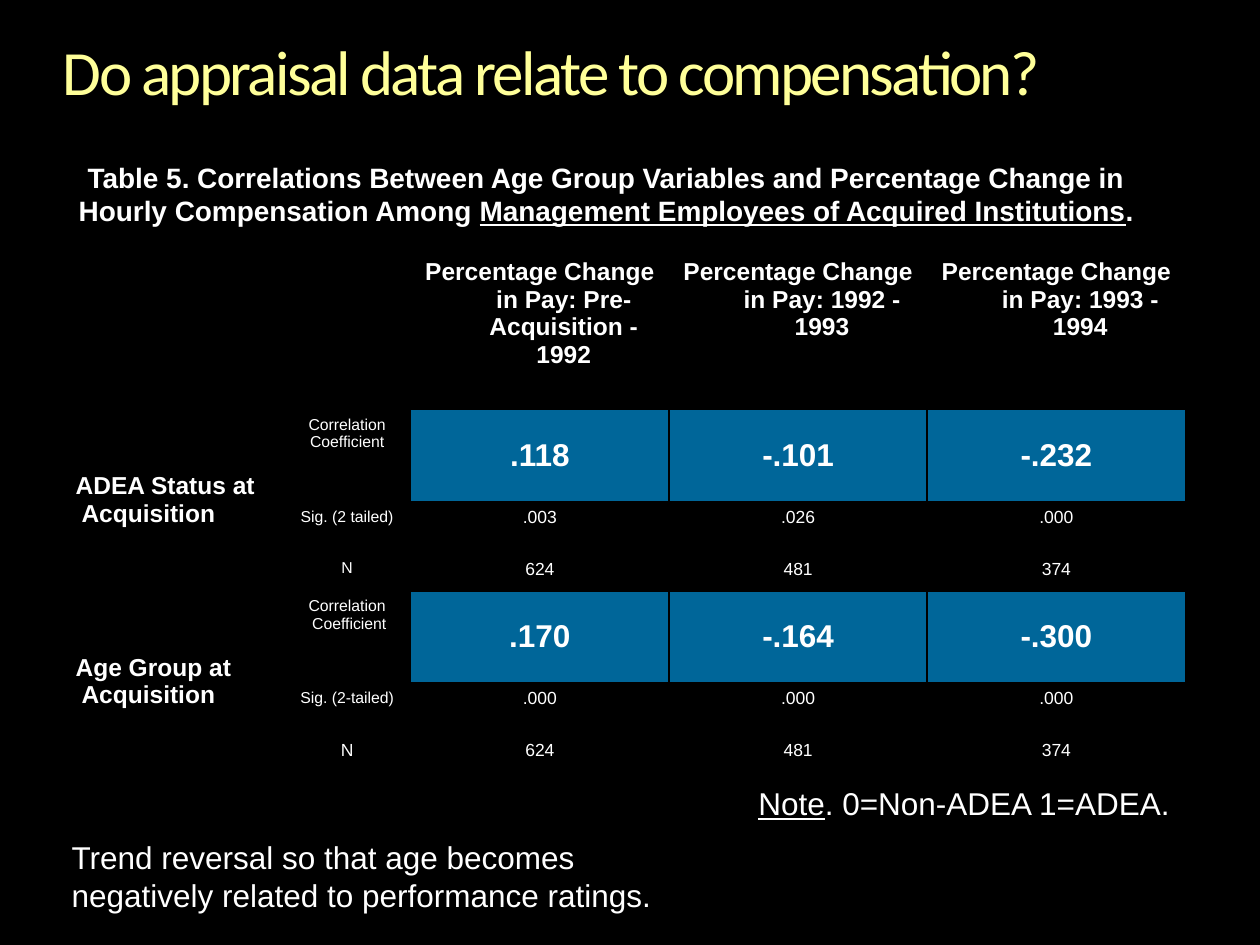
from lxml import etree
from pptx import Presentation
from pptx import util as u
from pptx.dml.color import RGBColor
from pptx.enum import text
from pptx.oxml.ns import qn

WHITE, BLACK, BLUE, CREAM = "FFFFFF", "000000", "006699", "FFFF99"
MID = text.MSO_ANCHOR.MIDDLE
TOP = text.MSO_ANCHOR.TOP
MARK = "_"


def paint(fill, color):
    fill.solid()
    fill.fore_color.rgb = RGBColor.from_string(color)


def write(frame, words, size=18, font="Arial", color=WHITE, bold=False,
          center=False, hang=0, track=0, lead=None):
    for i, line in enumerate(words.split("\n")):
        para = frame.paragraphs[0] if i == 0 else frame.add_paragraph()
        para.alignment = text.PP_ALIGN.CENTER if center else text.PP_ALIGN.LEFT
        if lead:
            para.line_spacing = lead
        if hang:
            props = para._p.get_or_add_pPr()
            props.set("marL", str(u.Inches(hang)))
            props.set("indent", str(-u.Inches(hang)))
        for j, part in enumerate(line.split(MARK)):
            if not part:
                continue
            run = para.add_run()
            run.text = part
            run.font.size = u.Pt(size)
            run.font.name = font
            run.font.bold = bold
            run.font.underline = j % 2 == 1
            run.font.color.rgb = RGBColor.from_string(color)
            if track:
                run._r.get_or_add_rPr().set("spc", str(int(track * 100)))


class Deck:
    def __init__(self, wide, high, back):
        self.show = Presentation()
        self.show.slide_width = u.Inches(wide)
        self.show.slide_height = u.Inches(high)
        self.slide = self.show.slides.add_slide(self.show.slide_layouts[6])
        paint(self.slide.background.fill, back)

    def label(self, box, words, anchor=TOP, inset=True, **style):
        frame = self.slide.shapes.add_textbox(*map(u.Inches, box)).text_frame
        frame.word_wrap = True
        frame.vertical_anchor = anchor
        if not inset:
            frame.margin_left = frame.margin_right = 0
            frame.margin_top = frame.margin_bottom = 0
        write(frame, words, **style)

    def grid(self, left, top, cols, rows):
        shape = self.slide.shapes.add_table(
            len(rows), len(cols), u.Inches(left), u.Inches(top),
            u.Inches(sum(cols)), u.Inches(sum(rows)))
        table = shape.table
        table.first_row = table.horz_banding = False
        for col, wide in zip(table.columns, cols):
            col.width = u.Inches(wide)
        for row, high in zip(table.rows, rows):
            row.height = u.Inches(high)
        for cell in table.iter_cells():
            cell.fill.background()
            self.edge(cell)
        return table

    def edge(self, cell):
        props = cell._tc.get_or_add_tcPr()
        for i, side in enumerate(("lnL", "lnR", "lnT", "lnB")):
            line = etree.Element(qn("a:" + side), w=str(u.Pt(1)))
            fill = etree.SubElement(line, qn("a:solidFill"))
            etree.SubElement(fill, qn("a:srgbClr"), val=BLACK)
            props.insert(i, line)

    def cell(self, table, row, col, words, anchor=TOP, fill=None, **style):
        cell = table.cell(row, col)
        cell.vertical_anchor = anchor
        if fill:
            paint(cell.fill, fill)
        write(cell.text_frame, words, hang=0.38, **style)


HEADS = ["Pre-Acquisition - 1992", "1992 - 1993", "1993 - 1994"]
COUNTS = ["624", "481", "374"]
GROUPS = [
    ("ADEA Status at\n Acquisition", [
        ("Correlation\nCoefficient", 9, [".118", "-.101", "-.232"]),
        ("Sig. (2 tailed)", 9, [".003", ".026", ".000"]),
        ("N", 9, COUNTS)]),
    ("Age Group at\n Acquisition", [
        ("Correlation\n Coefficient", 9, [".170", "-.164", "-.300"]),
        ("Sig. (2-tailed)", 9, [".000", ".000", ".000"]),
        ("N", 10, COUNTS)]),
]


def main():
    deck = Deck(10, 7.5, BLACK)
    deck.label((0.5, 0.33, 9.5, 0.92),
               "Do appraisal data relate to compensation?", inset=False,
               size=36, font="Calibri", color=CREAM, track=-1.5, lead=0.9)

    table = deck.grid(0.5, 2, [1.75, 1.01] + [2.05] * 3,
                      [1.25] + [0.73, 0.41, 0.3] * 2)
    for col, span in enumerate(HEADS, 2):
        deck.cell(table, 0, col, "Percentage Change in Pay: " + span,
                  size=14, bold=True, center=True)
    for g, (name, stats) in enumerate(GROUPS):
        first = 1 + 3 * g
        table.cell(first, 0).merge(table.cell(first + 2, 0))
        deck.cell(table, first, 0, name, anchor=MID, size=14, bold=True)
        for row, (stat, size, values) in enumerate(stats, first):
            deck.cell(table, row, 1, stat, size=size, center=True)
            look = {"size": 10}
            if row == first:
                look = {"size": 18, "bold": True, "anchor": MID, "fill": BLUE}
            for col, value in enumerate(values, 2):
                deck.cell(table, row, col, value, center=True, **look)

    deck.label((5.92, 6.17, 3.55, 0.4), "_Note_. 0=Non-ADEA 1=ADEA.",
               anchor=MID)
    deck.label((0.47, 1.22, 8.68, 0.64),
               "Table 5. Correlations Between Age Group Variables and "
               "Percentage Change in\nHourly Compensation Among "
               "_Management Employees of Acquired Institutions_.",
               anchor=MID, size=16, bold=True, center=True)
    deck.label((0.47, 6.6, 5.33, 0.71),
               "Trend reversal so that age becomes negatively related to "
               "performance ratings.")
    deck.show.save("out.pptx")


if __name__ == "__main__":
    main()
